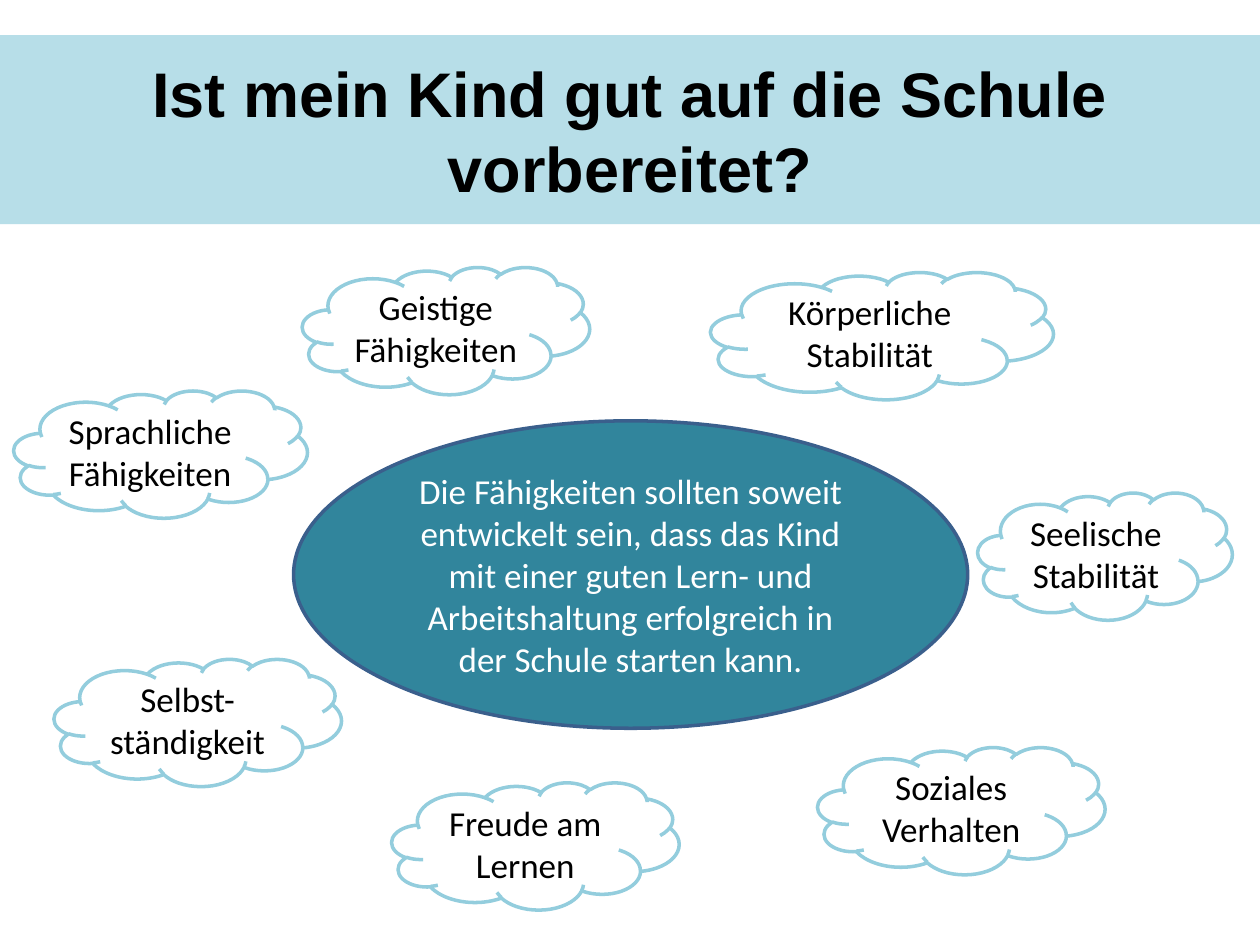
from pptx import Presentation
from pptx.dml.color import RGBColor
from pptx.enum.shapes import MSO_SHAPE as Shape
from pptx.enum.text import MSO_ANCHOR as Anchor, PP_ALIGN as Align
from pptx.util import Inches, Pt

COLORS = {
    "banner": "B7DEE8", "core": "31859C", "core_line": "3A5F8C",
    "cloud_line": "93CDDD", "white": "FFFFFF", "black": "000000",
}
TITLE = "Ist mein Kind gut auf die Schule vorbereitet?"
CORE = ("Die Fähigkeiten sollten soweit entwickelt sein, dass das Kind mit einer "
        "guten Lern- und Arbeitshaltung erfolgreich in der Schule starten kann.")
CLOUD_HEIGHT = 1.01
# Paragraphs, left, top, width
CLOUDS = [
    (["Geistige Fähigkeiten"], 2.4, 2.12, 2.28),
    (["Körperliche Stabilität"], 5.64, 2.16, 2.72),
    (["Seelische Stabilität"], 7.76, 3.91, 2.02),
    (["Soziales Verhalten"], 6.49, 5.93, 2.28),
    (["Freude am Lernen"], 3.11, 6.21, 2.28),
    (["Sprachliche Fähigkeiten"], 0.11, 3.1, 2.33),
    (["Selbst-", "ständigkeit"], 0.43, 5.23, 2.28),
]


def color(name):
    return RGBColor.from_string(COLORS[name])


def add_labelled(page, kind, place, lines, fill, ink, outline=None,
                 size=20, font="Calibri", bold=False, inset=0.1):
    box = page.shapes.add_shape(kind, *map(Inches, place))
    box.shadow.inherit = False
    box.fill.solid()
    box.fill.fore_color.rgb = color(fill)
    if outline:
        box.line.color.rgb = color(outline)
        box.line.width = Pt(2)
    else:
        box.line.fill.background()

    frame = box.text_frame
    frame.word_wrap = True
    frame.vertical_anchor = Anchor.MIDDLE
    frame.margin_left = frame.margin_right = Inches(inset)
    for index, line in enumerate(lines):
        para = frame.add_paragraph() if index else frame.paragraphs[0]
        para.alignment = Align.CENTER
        span = para.add_run()
        span.text = line
        span.font.name = font
        span.font.size = Pt(size)
        span.font.bold = bold
        span.font.color.rgb = color(ink)


deck = Presentation()
deck.slide_width, deck.slide_height = Inches(10), Inches(7.5)
page = deck.slides.add_slide(deck.slide_layouts[6])

# Title banner
add_labelled(page, Shape.RECTANGLE, (0, 0.28, 10, 1.5), [TITLE],
             "banner", "black", size=36, font="Arial", bold=True)

# Central statement
add_labelled(page, Shape.OVAL, (2.33, 3.34, 5.35, 2.44), [CORE],
             "core", "white", "core_line")

# Surrounding skills
for lines, left, top, width in CLOUDS:
    add_labelled(page, Shape.CLOUD, (left, top, width, CLOUD_HEIGHT), lines,
                 "white", "black", "cloud_line", inset=0.05)

deck.save("out.pptx")
